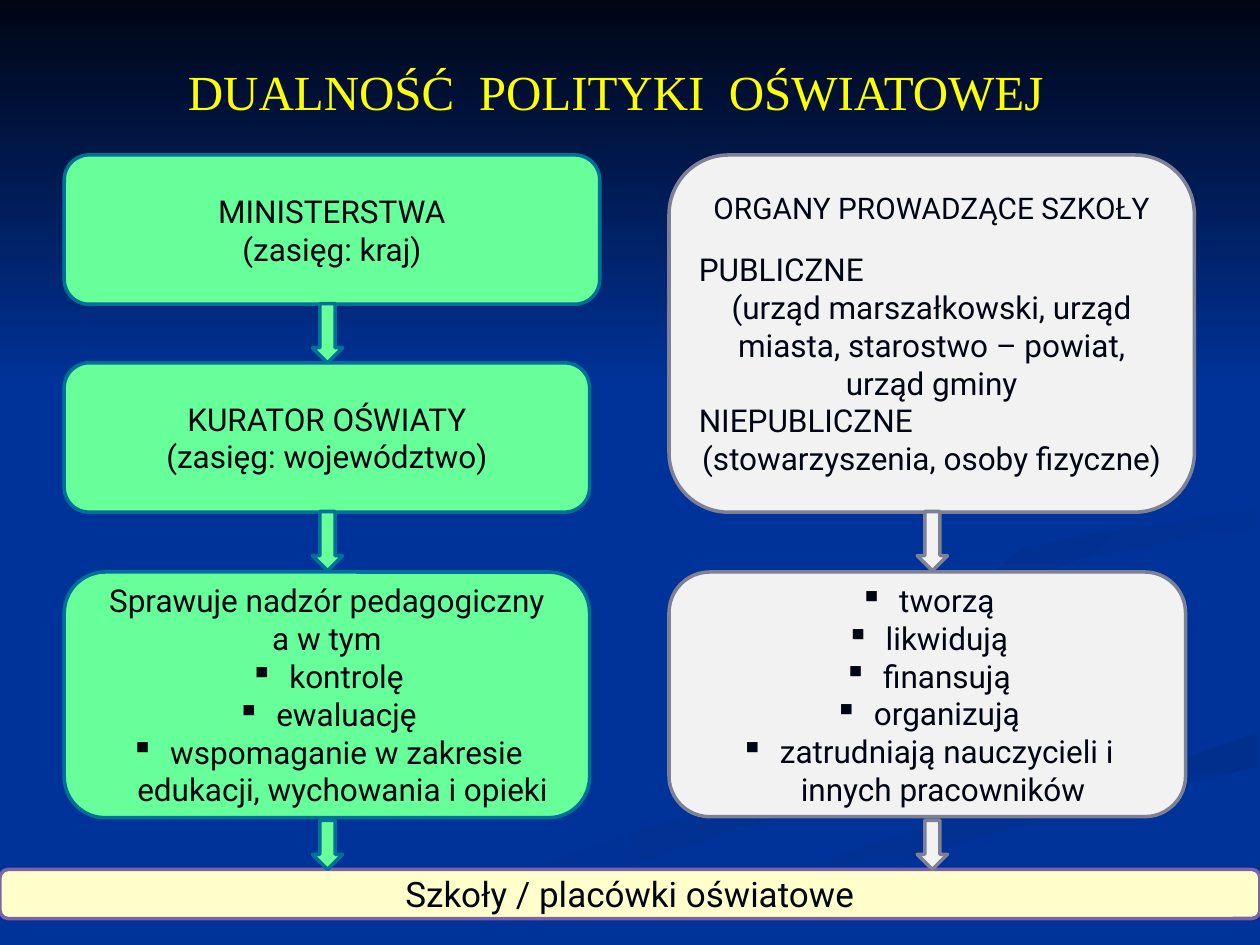
from dataclasses import dataclass

from pptx import Presentation
from pptx import util as u
from pptx.dml.color import RGBColor
from pptx.enum import shapes, text
from pptx.oxml.ns import qn
from lxml import etree

WIDTH, HEIGHT = u.Inches(10), u.Inches(7.5)
BLUE = RGBColor(0x00, 0x33, 0x99)
DEEP_BLUE = RGBColor(0x00, 0x2F, 0x8E)
INK = RGBColor(0x00, 0x05, 0x14)
GREEN = RGBColor(0x66, 0xFF, 0x99)
TEAL = RGBColor(0x00, 0x71, 0x97)
PALE = RGBColor(0xF2, 0xF2, 0xF2)
GREY = RGBColor(0x7E, 0x80, 0x95)
CREAM = RGBColor(0xFF, 0xFF, 0xCC)
PURPLE = RGBColor(0x7C, 0x63, 0xA6)
YELLOW = RGBColor(0xFF, 0xFF, 0x00)

CENTER, LEFT = text.PP_ALIGN.CENTER, text.PP_ALIGN.LEFT
BOX = shapes.MSO_SHAPE.FLOWCHART_ALTERNATE_PROCESS
ARROW = shapes.MSO_SHAPE.DOWN_ARROW
BULLET_INDENT = u.Inches(0.25)
SWOOSH_UNIT = WIDTH // 1000


@dataclass
class Area:
    """Left, top, width and height in percent of the slide."""
    left: float
    top: float
    width: float
    height: float

    def lengths(self) -> list[int]:
        return [round(WIDTH * self.left / 100), round(HEIGHT * self.top / 100),
                round(WIDTH * self.width / 100), round(HEIGHT * self.height / 100)]


@dataclass
class Line:
    words: str
    size: float = 18
    align: int = CENTER
    bullet: bool = False
    gap_after: float = 0


@dataclass
class Palette:
    fill: RGBColor
    line: RGBColor


@dataclass
class Box:
    area: Area
    palette: Palette
    lines: list[Line]


@dataclass
class Swoosh:
    points: list[tuple[int, int]]
    start: RGBColor
    end: RGBColor
    angle: float


def apply(target, values: dict) -> None:
    for name, value in values.items():
        setattr(target, name, value)


def fill_gradient(shape, start: RGBColor, end: RGBColor, angle: float) -> None:
    shape.fill.gradient()
    shape.fill.gradient_angle = angle
    for stop, color in zip(shape.fill.gradient_stops, (start, end)):
        stop.color.rgb = color
    shape.line.fill.background()
    shape.shadow.inherit = False


def draw_swoosh(slide, swoosh: Swoosh) -> None:
    builder = slide.shapes.build_freeform(*swoosh.points[0], scale=SWOOSH_UNIT)
    builder.add_line_segments(swoosh.points[1:], close=True)
    fill_gradient(builder.convert_to_shape(), swoosh.start, swoosh.end, swoosh.angle)


def draw_shape(slide, kind, area: Area, palette: Palette):
    shape = slide.shapes.add_shape(kind, *area.lengths())
    shape.shadow.inherit = False
    shape.fill.solid()
    shape.fill.fore_color.rgb = palette.fill
    shape.line.color.rgb = palette.line
    shape.line.width = u.Pt(2)
    return shape


def add_bullet(paragraph) -> None:
    properties = paragraph._p.get_or_add_pPr()
    properties.set("marL", str(BULLET_INDENT))
    properties.set("indent", str(-BULLET_INDENT))
    etree.SubElement(properties, qn("a:buChar")).set("char", "▪")


def write_line(paragraph, line: Line, font: str, color: RGBColor) -> None:
    apply(paragraph, {"alignment": line.align, "space_after": u.Pt(line.gap_after)})
    if line.bullet:
        add_bullet(paragraph)
    run = paragraph.add_run()
    run.text = line.words
    apply(run.font, {"name": font, "size": u.Pt(line.size), "bold": False})
    run.font.color.rgb = color


def draw_box(slide, box: Box) -> None:
    frame = draw_shape(slide, BOX, box.area, box.palette).text_frame
    apply(frame, {"word_wrap": True, "vertical_anchor": text.MSO_ANCHOR.MIDDLE})
    for index, line in enumerate(box.lines):
        paragraph = frame.add_paragraph() if index else frame.paragraphs[0]
        write_line(paragraph, line, "Roboto", INK)


def place_title(slide, words: str, area: Area) -> None:
    title = slide.shapes.title
    apply(title, dict(zip(("left", "top", "width", "height"), area.lengths())))
    apply(title.text_frame, {"word_wrap": False, "auto_size": text.MSO_AUTO_SIZE.NONE,
                             "vertical_anchor": text.MSO_ANCHOR.MIDDLE})
    write_line(title.text_frame.paragraphs[0], Line(words, 28), "Times New Roman", YELLOW)
    slide.shapes._spTree.append(title._element)


def bullets(*items: str) -> list[Line]:
    return [Line(" " + item, bullet=True) for item in items]


SWOOSHES = [
    Swoosh([(781, 553), (745, 538), (682, 519), (626, 502), (594, 485), (576, 469),
            (575, 459), (570, 472), (581, 484), (602, 495), (654, 513), (714, 530),
            (762, 547), (785, 562), (783, 574), (759, 590), (714, 605), (652, 620),
            (579, 639), (499, 661), (417, 690), (338, 727), (300, 749), (361, 749),
            (431, 714), (499, 687), (564, 665), (623, 647), (699, 628), (756, 614),
            (786, 601), (799, 585), (795, 567)], BLUE, DEEP_BLUE, 0),
    Swoosh([(725, 464), (734, 483), (775, 503), (831, 519), (889, 535), (931, 553),
            (943, 570), (936, 587), (911, 600), (869, 611), (780, 634), (704, 655),
            (619, 684), (526, 724), (477, 749), (519, 747), (599, 706), (696, 669),
            (797, 638), (904, 610), (964, 594), (999, 581), (999, 538), (941, 527),
            (866, 509), (817, 492), (786, 473), (782, 460), (800, 442), (850, 427),
            (933, 415), (999, 402), (999, 387), (942, 399), (851, 411), (770, 427),
            (732, 446)], BLUE, BLUE, 0),
    Swoosh([(503, 749), (571, 749), (614, 726), (670, 702), (752, 672), (861, 640),
            (998, 609), (998, 581), (950, 598), (867, 620), (764, 647), (662, 681),
            (569, 719)], DEEP_BLUE, BLUE, 270),
    Swoosh([(781, 460), (786, 474), (806, 487), (826, 496), (809, 484), (805, 472),
            (816, 459), (859, 443), (936, 429), (998, 420), (998, 402), (933, 415),
            (865, 424), (810, 437)], DEEP_BLUE, BLUE, 315),
]

SUPERVISION, FOUNDERS, SCHOOLS = Palette(GREEN, TEAL), Palette(PALE, GREY), Palette(CREAM, PURPLE)
LEFT_COLUMN, RIGHT_COLUMN = 5.1, 53.1
LEFT_ARROWS, RIGHT_ARROWS = 24.8, 72.8
FIRST_ROW, SECOND_ROW, THIRD_ROW, LAST_ROW = 16.4, 38.4, 60.53, 92

BOXES = [
    Box(Area(LEFT_COLUMN, FIRST_ROW, 42.5, 15.8), SUPERVISION,
        [Line("MINISTERSTWA"), Line("(zasięg: kraj)")]),
    Box(Area(LEFT_COLUMN, SECOND_ROW, 41.7, 15.8), SUPERVISION,
        [Line("KURATOR OŚWIATY"), Line("(zasięg: województwo)")]),
    Box(Area(LEFT_COLUMN, THIRD_ROW, 41.7, 26), SUPERVISION,
        [Line("Sprawuje nadzór pedagogiczny"), Line("a w tym")]
        + bullets("kontrolę", "ewaluację", "wspomaganie w zakresie edukacji, wychowania i opieki")),
    Box(Area(0, LAST_ROW, 100, 5.2), SCHOOLS, [Line("Szkoły / placówki oświatowe", 20)]),
    Box(Area(RIGHT_COLUMN, FIRST_ROW, 41.7, 37.8), FOUNDERS,
        [Line("ORGANY PROWADZĄCE SZKOŁY", 17, gap_after=14),
         Line("PUBLICZNE", align=LEFT),
         Line("(urząd marszałkowski, urząd miasta, starostwo – powiat, urząd gminy"),
         Line("NIEPUBLICZNE", align=LEFT),
         Line("(stowarzyszenia, osoby fizyczne)")]),
    Box(Area(RIGHT_COLUMN, THIRD_ROW, 41, 25.9), FOUNDERS,
        bullets("tworzą", "likwidują", "finansują", "organizują",
                "zatrudniają nauczycieli i innych pracowników")),
]

ARROW_COLUMNS = [
    (LEFT_ARROWS, SUPERVISION, [(32.13, 6.27), (54.13, 6.27), (86.8, 5.2)]),
    (RIGHT_ARROWS, FOUNDERS, [(54.13, 6.27), (86.8, 5.2)]),
]


def main() -> None:
    presentation = Presentation()
    apply(presentation, {"slide_width": WIDTH, "slide_height": HEIGHT})
    slide = presentation.slides.add_slide(presentation.slide_layouts[5])
    slide.background.fill.solid()
    slide.background.fill.fore_color.rgb = BLUE
    for swoosh in SWOOSHES:
        draw_swoosh(slide, swoosh)
    sky = slide.shapes.add_shape(shapes.MSO_SHAPE.RECTANGLE, *Area(0, 0, 100, 41.07).lengths())
    fill_gradient(sky, INK, BLUE, 270)
    for box in BOXES:
        draw_box(slide, box)
    for left, palette, arrows in ARROW_COLUMNS:
        for top, height in arrows:
            draw_shape(slide, ARROW, Area(left, top, 2.4, height), palette)
    place_title(slide, "DUALNOŚĆ  POLITYKI  OŚWIATOWEJ", Area(13.5, 5.87, 70.7, 7.6))
    presentation.save("out.pptx")


if __name__ == "__main__":
    main()
